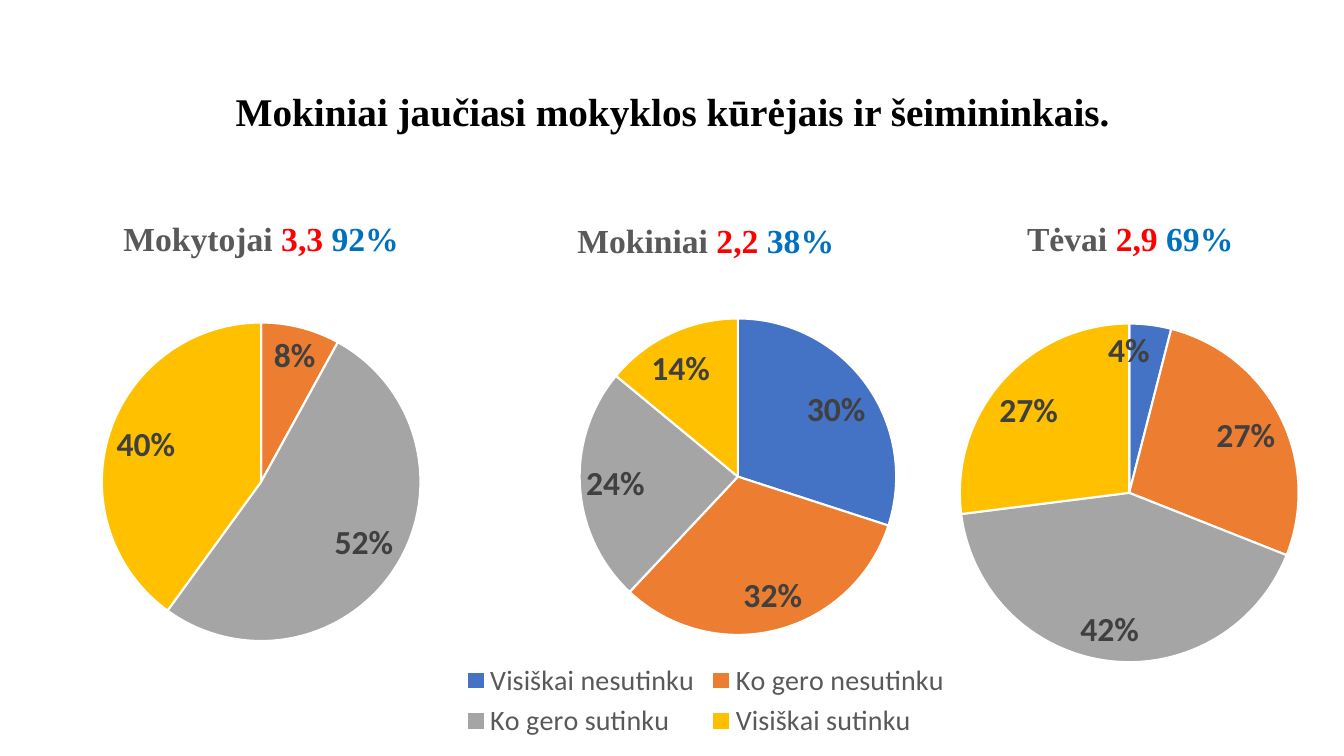
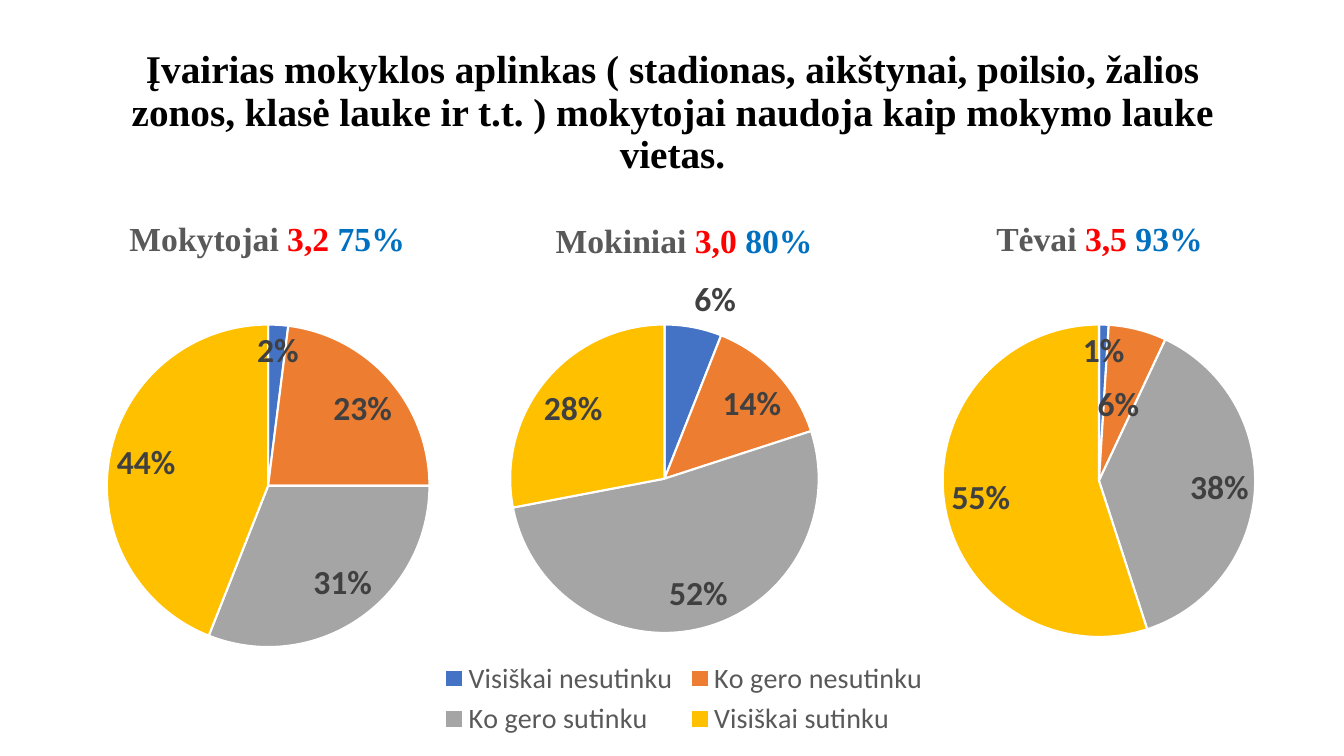
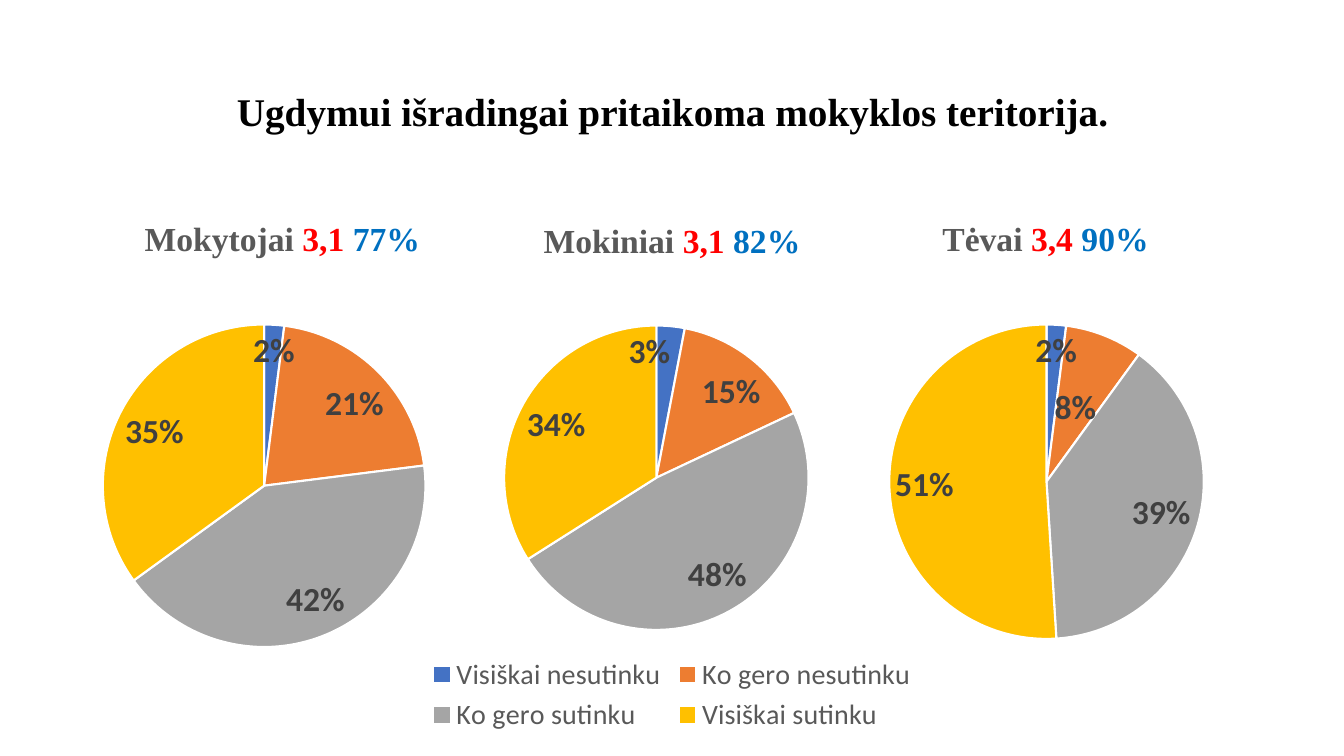
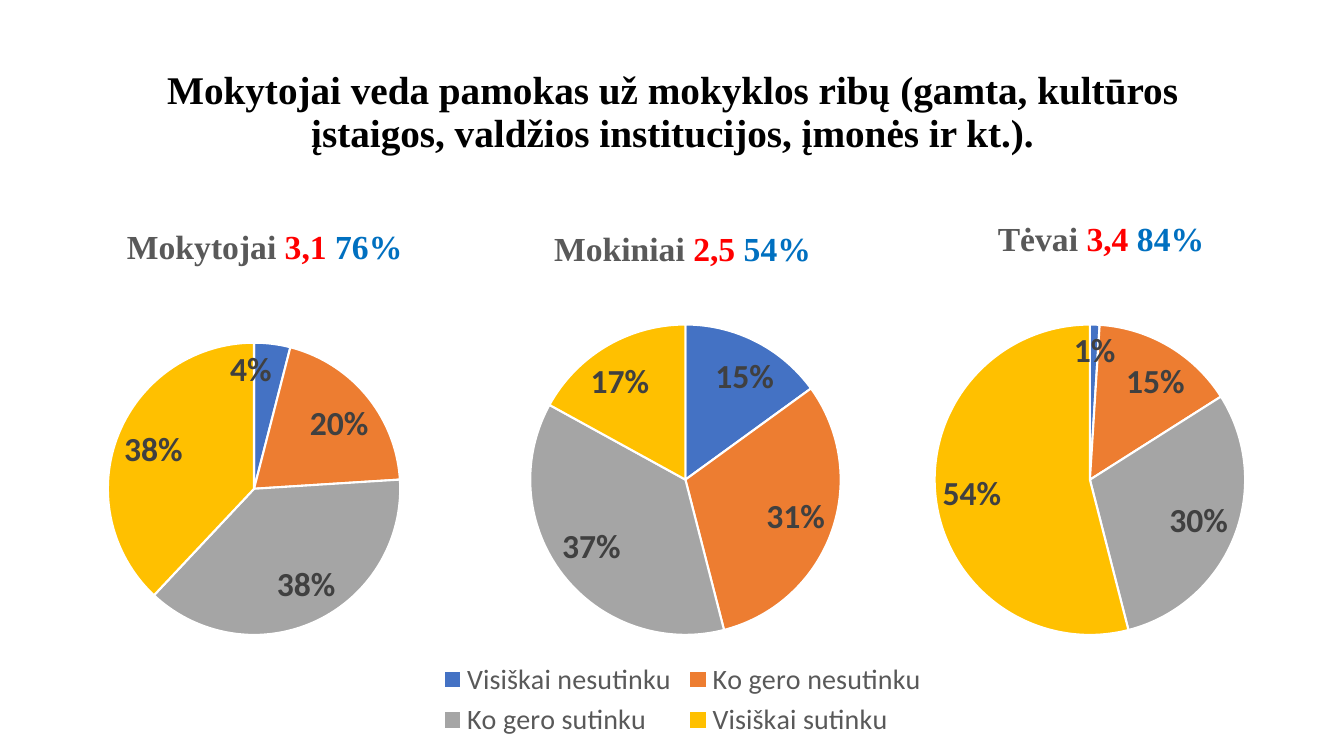
from pptx import Presentation
from pptx.chart.data import CategoryChartData
from pptx.dml.color import RGBColor
from pptx.enum.chart import XL_CHART_TYPE as ChartType
from pptx.enum.chart import XL_LABEL_POSITION as LabelPosition
from pptx.enum.chart import XL_LEGEND_POSITION as LegendPosition
from pptx.enum.text import MSO_ANCHOR, PP_ALIGN
from pptx.oxml import parse_xml
from pptx.oxml.ns import nsdecls, qn
from pptx.util import Inches, Pt

SERIF, SANS = "Times New Roman", "Calibri"
BLACK, WHITE, GREY, DARK = "000000", "FFFFFF", "595959", "404040"
RED, BLUE = "FF0000", "0070C0"
SLICE_COLOURS = ["4472C4", "ED7D31", "A5A5A5", "FFC000"]
ANSWERS = ["Visiškai nesutinku", "Ko gero nesutinku", "Ko gero sutinku", "Visiškai sutinku"]
PERCENT = "0%;;"  # zero shares stay unlabelled
TINY, SMALL = 0.05, 0.1  # shares whose labels need a fixed position


def style_font(font, name, size, colour, bold=False):
    font.name, font.size, font.bold = name, Pt(size), bold
    font.color.rgb = RGBColor.from_string(colour)


# Each chart: group, mean score, share agreeing, answer shares,
# frame (left, top, width, height) and pie (centre x, centre y, radius) in grid cells
SURVEY = [
    ("Mokiniai jaučiasi mokyklos kūrėjais ir šeimininkais.", [
        ("Mokytojai", "3,3", "92%", [0, 0.08, 0.52, 0.4], (1.4, 20, 49, 45.1), (25.9, 47.8, 15.8)),
        ("Mokiniai", "2,2", "38%", [0.3, 0.32, 0.24, 0.14], (25.6, 20, 88.8, 53.8), (73.2, 47.3, 15.7)),
        ("Tėvai", "2,9", "69%", [0.04, 0.27, 0.42, 0.27], (92.2, 20, 39.8, 47.2), (112, 48.9, 16.8)),
    ]),
    ("Įvairias mokyklos aplinkas ( stadionas, aikštynai, poilsio, žalios zonos, klasė lauke ir t.t. ) "
     "mokytojai naudoja kaip mokymo lauke vietas.", [
        ("Mokytojai", "3,2", "75%", [0.02, 0.23, 0.31, 0.44], (2, 20, 49, 45.7), (26.6, 48.2, 16)),
        ("Mokiniai", "3,0", "80%", [0.06, 0.14, 0.52, 0.28], (22.2, 20, 91.3, 53.6), (65.9, 47.5, 15.3)),
        ("Tėvai", "3,5", "93%", [0.01, 0.06, 0.38, 0.55], (85.7, 20, 46.7, 44.8), (109, 47.7, 15.5)),
    ]),
    ("Ugdymui išradingai pritaikoma mokyklos teritorija.", [
        ("Mokytojai", "3,1", "77%", [0.02, 0.21, 0.42, 0.35], (1.3, 20, 53.4, 45.6), (26.2, 48.2, 16)),
        ("Mokiniai", "3,1", "82%", [0.03, 0.15, 0.48, 0.34], (22.2, 20, 88.9, 53.2), (65.1, 47.4, 15.1)),
        ("Tėvai", "3,4", "90%", [0.02, 0.08, 0.39, 0.51], (79.3, 20, 48.8, 44.8), (103.8, 47.8, 15.6)),
    ]),
    ("Mokytojai veda pamokas už mokyklos ribų (gamta, kultūros įstaigos, valdžios institucijos, "
     "įmonės ir kt.).", [
        ("Tėvai", "3,4", "84%", [0.01, 0.15, 0.3, 0.54], (86.9, 20, 44.6, 44.5), (108.1, 47.6, 15.4)),
        ("Mokiniai", "2,5", "54%", [0.15, 0.31, 0.37, 0.17], (24.3, 20.8, 86.8, 52.9), (68, 47.6, 15.4)),
        ("Mokytojai", "3,1", "76%", [0.04, 0.2, 0.38, 0.38], (1.9, 20.8, 48.7, 43.7), (25.2, 48.5, 14.5)),
    ]),
]

deck = Presentation()
deck.slide_width, deck.slide_height = Inches(13.33), Inches(7.5)
cell = deck.slide_height / 75  # square grid, 75 rows tall
layout = deck.slide_layouts.get_by_name("Title Only")

for heading, charts in SURVEY:
    page = deck.slides.add_slide(layout)
    title = page.shapes.title
    title.left, title.top = round(9.2 * cell), round(4 * cell)
    title.width, title.height = round(115 * cell), round(14.5 * cell)
    title.text_frame.text = heading
    title.text_frame.vertical_anchor = MSO_ANCHOR.MIDDLE
    para = title.text_frame.paragraphs[0]
    para.alignment, para.line_spacing = PP_ALIGN.CENTER, 0.9
    style_font(para.runs[0].font, SERIF, 28, BLACK, True)

    for group, score, agreeing, shares, frame, pie in charts:
        has_legend = group == "Mokiniai"
        data = CategoryChartData(number_format=PERCENT)
        data.categories = ANSWERS if has_legend else ["1", "2", "3", "4"]
        data.add_series("Series 1", shares)
        box = [round(length * cell) for length in frame]
        chart = page.shapes.add_chart(ChartType.PIE, *box, data).chart
        style_font(chart.font, SANS, 10, BLACK)

        chart.has_title = True
        para = chart.chart_title.text_frame.paragraphs[0]
        for text, colour in [(group + " ", GREY), (score + " ", RED), (agreeing, BLUE)]:
            span = para.add_run()
            span.text = text
            style_font(span.font, SERIF, 24, colour, True)

        chart.has_legend = has_legend
        if has_legend:
            chart.legend.position = LegendPosition.BOTTOM
            chart.legend.include_in_layout = False
            style_font(chart.legend.font, SANS, 20, GREY)

        plot = chart.plots[0]
        plot.vary_by_categories = True
        series = plot.series[0]
        labels = series.data_labels
        labels.show_value, labels.show_percentage = True, False
        labels.number_format, labels.number_format_is_linked = PERCENT, False
        labels.position = LabelPosition.BEST_FIT
        style_font(labels.font, SANS, 24, DARK, True)
        for index, colour in enumerate(SLICE_COLOURS):
            point = series.points[index]
            point.format.fill.solid()
            point.format.fill.fore_color.rgb = RGBColor.from_string(colour)
            point.format.line.color.rgb = RGBColor.from_string(WHITE)
            point.format.line.width = Pt(1.5)

        # A tiny first slice keeps its label at the rim; a small neighbour moves inwards
        if 0 < shares[0] < TINY:
            fixed = {0: LabelPosition.INSIDE_END}
            if shares[1] < SMALL:
                fixed[1] = LabelPosition.CENTER
            for index, position in fixed.items():
                label = series.points[index].data_label
                style_font(label.font, SANS, 24, DARK, True)
                label.position = position

        # Place the pie inside its frame and keep overlapping frames see-through
        left, top, width, height = frame
        centre_x, centre_y, radius = pie
        places = {
            "x": (centre_x - radius - left) / width,
            "y": (centre_y - radius - top) / height,
            "w": 2 * radius / width,
            "h": 2 * radius / height,
        }
        modes = '<c:layoutTarget val="inner"/><c:xMode val="edge"/><c:yMode val="edge"/>'
        values = "".join(f'<c:{key} val="{share:.4f}"/>' for key, share in places.items())
        chart_part = chart.element.find(qn("c:chart"))
        plot_area = chart_part.find(qn("c:plotArea"))
        for old_layout in plot_area.findall(qn("c:layout")):
            plot_area.remove(old_layout)
        plot_area.insert(0, parse_xml(
            f'<c:layout {nsdecls("c")}><c:manualLayout>{modes}{values}</c:manualLayout></c:layout>'))
        chart_part.addnext(parse_xml(
            f'<c:spPr {nsdecls("c", "a")}><a:noFill/><a:ln><a:noFill/></a:ln></c:spPr>'))

deck.save("out.pptx")
